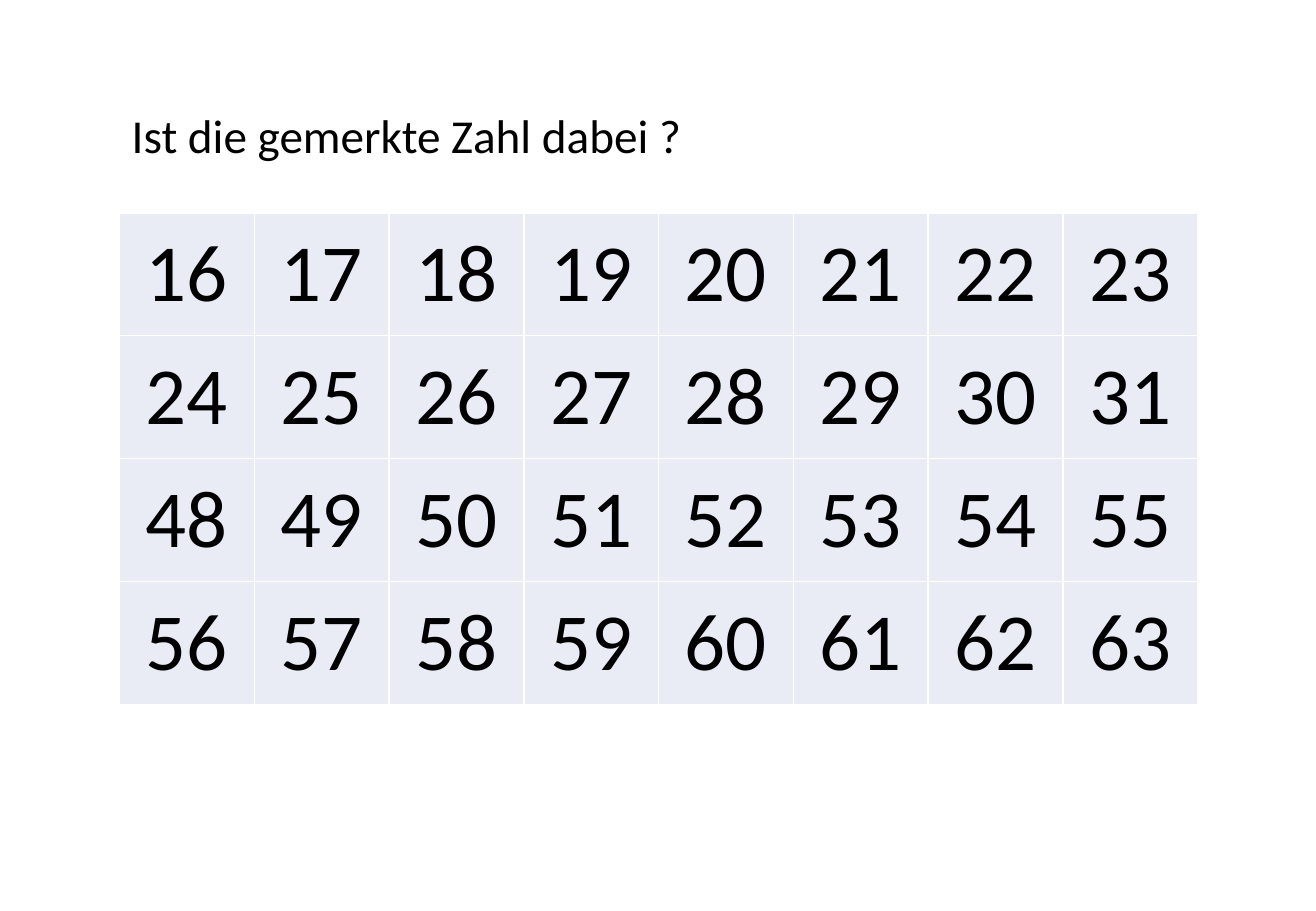
from lxml.etree import SubElement as Sub
from pptx import Presentation
from pptx.dml.color import RGBColor as Rgb
from pptx.enum.text import MSO_ANCHOR as Anchor, MSO_AUTO_SIZE as Fit, PP_ALIGN as Align
from pptx.oxml.ns import qn
from pptx.util import Cm, Pt

HUES = {"ink": "000000", "cell": "E9EBF5", "line": "FFFFFF"}
STARTS = (16, 24, 48, 56)
COLS = 8


class Card:
    """A number card: its style and its slide."""

    def __init__(self, deck):
        self.font = "Calibri"
        self.slide = deck.slides.add_slide(deck.slide_layouts[5])

    def label(self, frame, text, size, align):
        frame.text = text
        para = frame.paragraphs[0]
        para.alignment = align
        para.font.name = self.font
        para.font.size = Pt(size)
        para.font.color.rgb = Rgb.from_string(HUES["ink"])

    def title(self, text, x, y, w, h):
        box = self.slide.shapes.title
        box.left, box.top, box.width, box.height = Cm(x), Cm(y), Cm(w), Cm(h)
        frame = box.text_frame
        self.label(frame, text, 28, Align.LEFT)
        frame.word_wrap = False
        frame.auto_size = Fit.SHAPE_TO_FIT_TEXT
        frame.vertical_anchor = Anchor.TOP

    def border(self, cell):
        props = cell._tc.get_or_add_tcPr()
        for at, side in enumerate(("lnL", "lnR", "lnT", "lnB")):
            line = props.makeelement(qn(f"a:{side}"), {"w": str(Pt(1))})
            fill = Sub(line, qn("a:solidFill"))
            Sub(fill, qn("a:srgbClr"), val=HUES["line"])
            props.insert(at, line)

    def table(self, rows, x, y, w, h):
        size = len(rows), len(rows[0])
        grid = self.slide.shapes.add_table(*size, Cm(x), Cm(y), Cm(w), Cm(h)).table
        grid.first_row = grid.horz_banding = False
        for r, row in enumerate(rows):
            for c, num in enumerate(row):
                cell = grid.cell(r, c)
                self.label(cell.text_frame, str(num), 48, Align.CENTER)
                cell.margin_left = cell.margin_right = Cm(0.1)
                cell.margin_top = cell.margin_bottom = Cm(0.25)
                cell.fill.solid()
                cell.fill.fore_color.rgb = Rgb.from_string(HUES["cell"])
                self.border(cell)


def main():
    deck = Presentation()
    deck.slide_width, deck.slide_height = Cm(27.52), Cm(19.05)
    card = Card(deck)
    card.title("Ist die gemerkte Zahl dabei ?", 2.5, 2.09, 12.1, 1.45)
    rows = [range(start, start + COLS) for start in STARTS]
    card.table(rows, 2.5, 4.45, 22.55, 10.28)
    deck.save("out.pptx")


if __name__ == "__main__":
    main()
